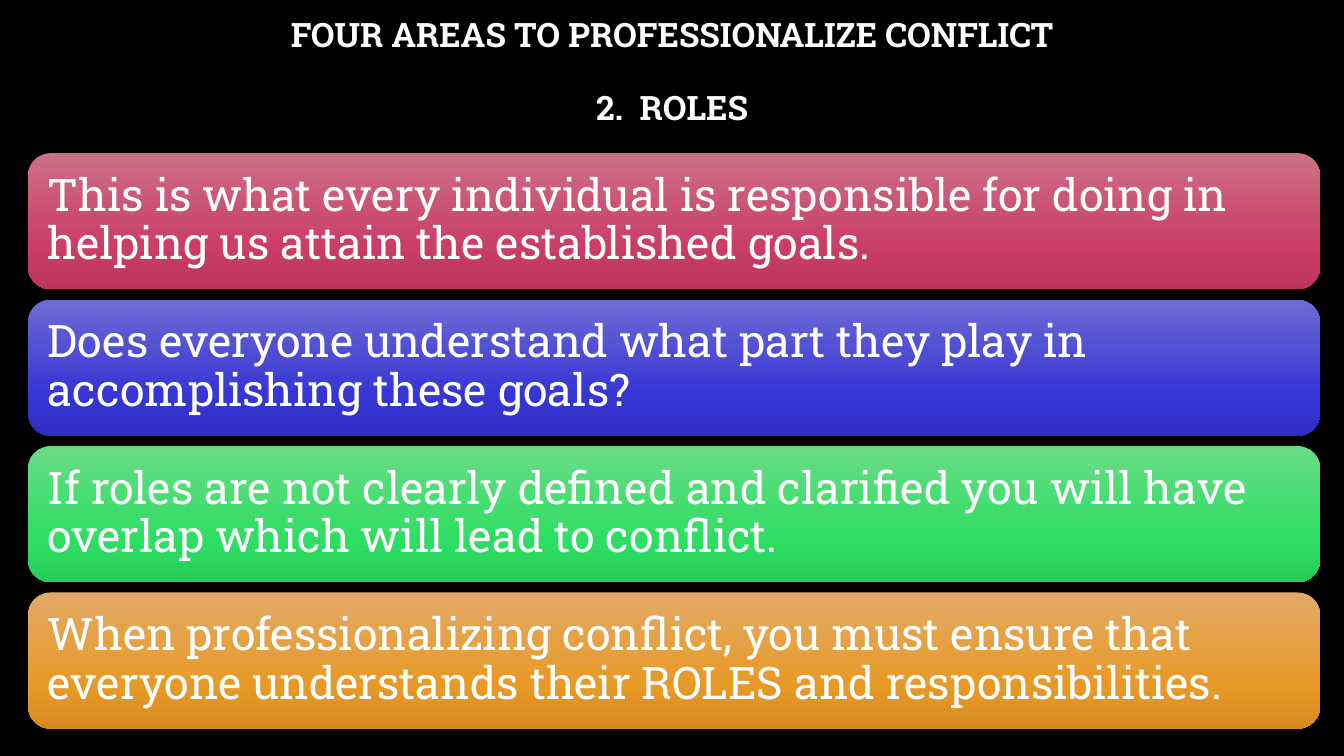
from copy import deepcopy
from pptx import Presentation
from pptx.dml.color import RGBColor
from pptx.enum.shapes import MSO_SHAPE
from pptx.enum.text import MSO_ANCHOR, MSO_AUTO_SIZE, PP_ALIGN
from pptx.oxml.ns import qn
from pptx.util import Cm, Pt

TITLE = ["FOUR AREAS TO PROFESSIONALIZE CONFLICT", "2.\u00a0 ROLES".replace("\u00a0", " ")]
CARDS = [
    ("This is what every individual is responsible for doing in helping us attain the established goals.",
     (RGBColor(0xCC, 0x70, 0x87), RGBColor(0xCA, 0x3D, 0x66), RGBColor(0xBA, 0x35, 0x5B))),
    ("Does everyone understand what part they play in accomplishing these goals?",
     (RGBColor(0x6C, 0x6C, 0xD4), RGBColor(0x36, 0x36, 0xD4), RGBColor(0x2E, 0x2E, 0xC3))),
    ("If roles are not clearly defined and clarified you will have overlap which will lead to conflict.",
     (RGBColor(0x69, 0xDB, 0x86), RGBColor(0x2E, 0xDE, 0x62), RGBColor(0x26, 0xCD, 0x58))),
    ("When professionalizing conflict, you must ensure that everyone understands their ROLES and responsibilities.",
     (RGBColor(0xE2, 0xAA, 0x66), RGBColor(0xE7, 0x99, 0x26), RGBColor(0xD6, 0x8B, 0x1F))),
]
STOPS = (0, 0.69, 1)
WHITE = RGBColor(0xFF, 0xFF, 0xFF)
BLACK = RGBColor(0, 0, 0)
FONT = "Roboto Slab"
LEFT, TOP, WIDTH, HEIGHT, GAP = 0.71, 3.86, 32.56, 3.43, 0.26
INSET = Cm(0.33)


def style(para, size, bold, align):
    """Format one paragraph and its runs."""
    para.alignment = align
    para.line_spacing = 0.9
    for run in para.runs:
        run.font.name = FONT
        run.font.size = Pt(size)
        run.font.bold = bold
        run.font.color.rgb = WHITE


def shade(shape, colors):
    """Fill a shape with a three-stop gradient running down."""
    fill = shape.fill
    fill.gradient()
    fill.gradient_angle = 270
    stops = next(shape._element.spPr.iter(qn("a:gsLst")))
    stops.append(deepcopy(stops[0]))
    for stop, place, color in zip(fill.gradient_stops, STOPS, colors):
        stop.position = place
        stop.color.rgb = color


def add_title(slide):
    """Fill and place the title."""
    title = slide.shapes.title
    title.left, title.top, title.width, title.height = Cm(5.89), Cm(0), Cm(22.1), Cm(3.68)
    frame = title.text_frame
    frame.text = "\n".join(TITLE)
    frame.word_wrap = True
    frame.auto_size = MSO_AUTO_SIZE.NONE
    frame.vertical_anchor = MSO_ANCHOR.MIDDLE
    for para in frame.paragraphs:
        style(para, 24, True, PP_ALIGN.CENTER)
    frame.paragraphs[1].space_before = Pt(26)


def add_card(slide, row, text, colors):
    """Add one rounded card in its row."""
    top = TOP + row * (HEIGHT + GAP)
    card = slide.shapes.add_shape(MSO_SHAPE.ROUNDED_RECTANGLE, Cm(LEFT), Cm(top), Cm(WIDTH), Cm(HEIGHT))
    card.shadow.inherit = False
    card.line.fill.background()
    shade(card, colors)
    frame = card.text_frame
    frame.text = text
    frame.word_wrap = True
    frame.vertical_anchor = MSO_ANCHOR.MIDDLE
    frame.margin_left = frame.margin_right = INSET
    frame.margin_top = frame.margin_bottom = INSET
    style(frame.paragraphs[0], 32, False, PP_ALIGN.LEFT)


def main():
    """Build the slide and save it."""
    deck = Presentation()
    deck.slide_width, deck.slide_height = Cm(33.87), Cm(19.05)
    slide = deck.slides.add_slide(deck.slide_layouts[5])
    slide.background.fill.solid()
    slide.background.fill.fore_color.rgb = BLACK
    add_title(slide)
    for row, (text, colors) in enumerate(CARDS):
        add_card(slide, row, text, colors)
    deck.save("out.pptx")


if __name__ == "__main__":
    main()
